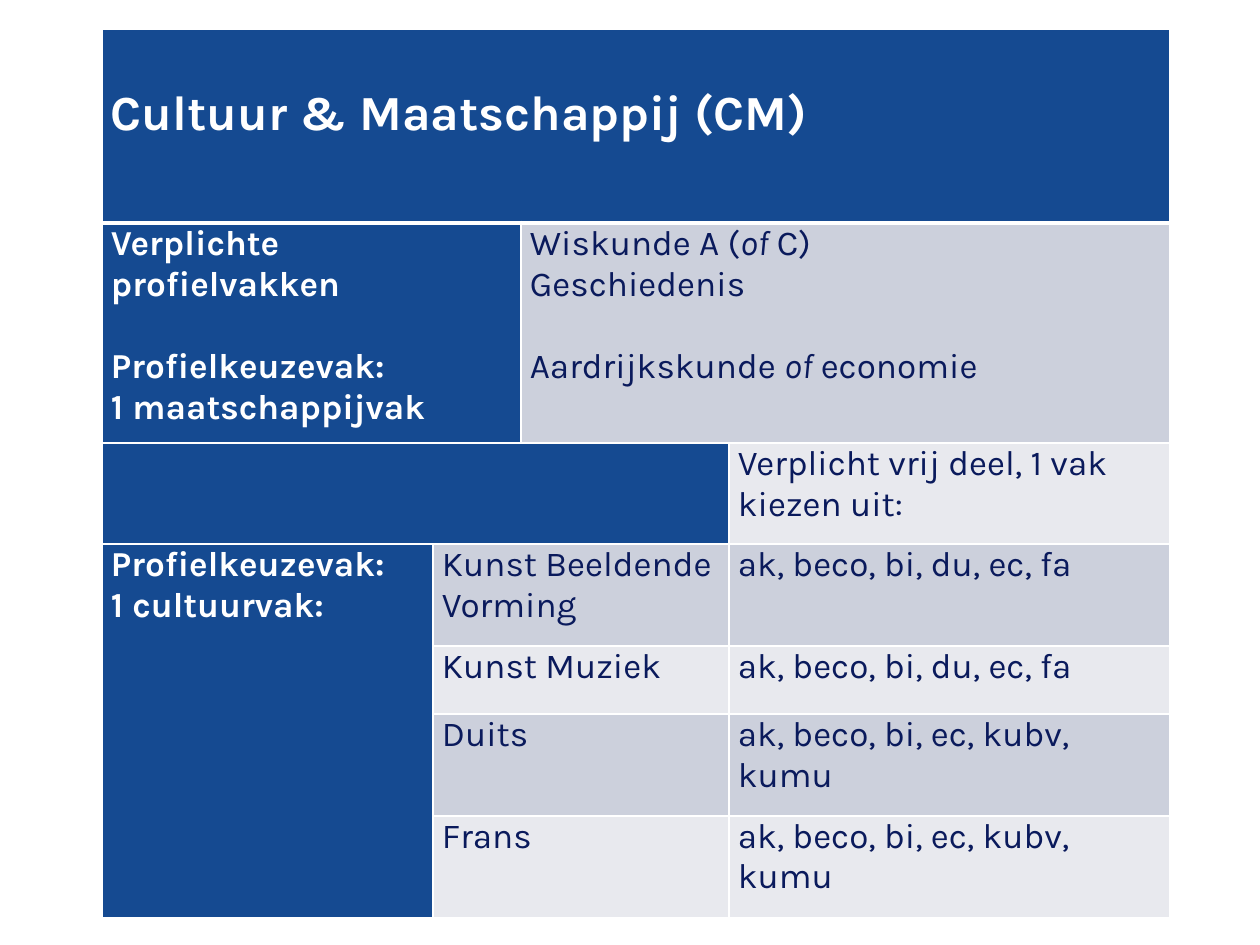
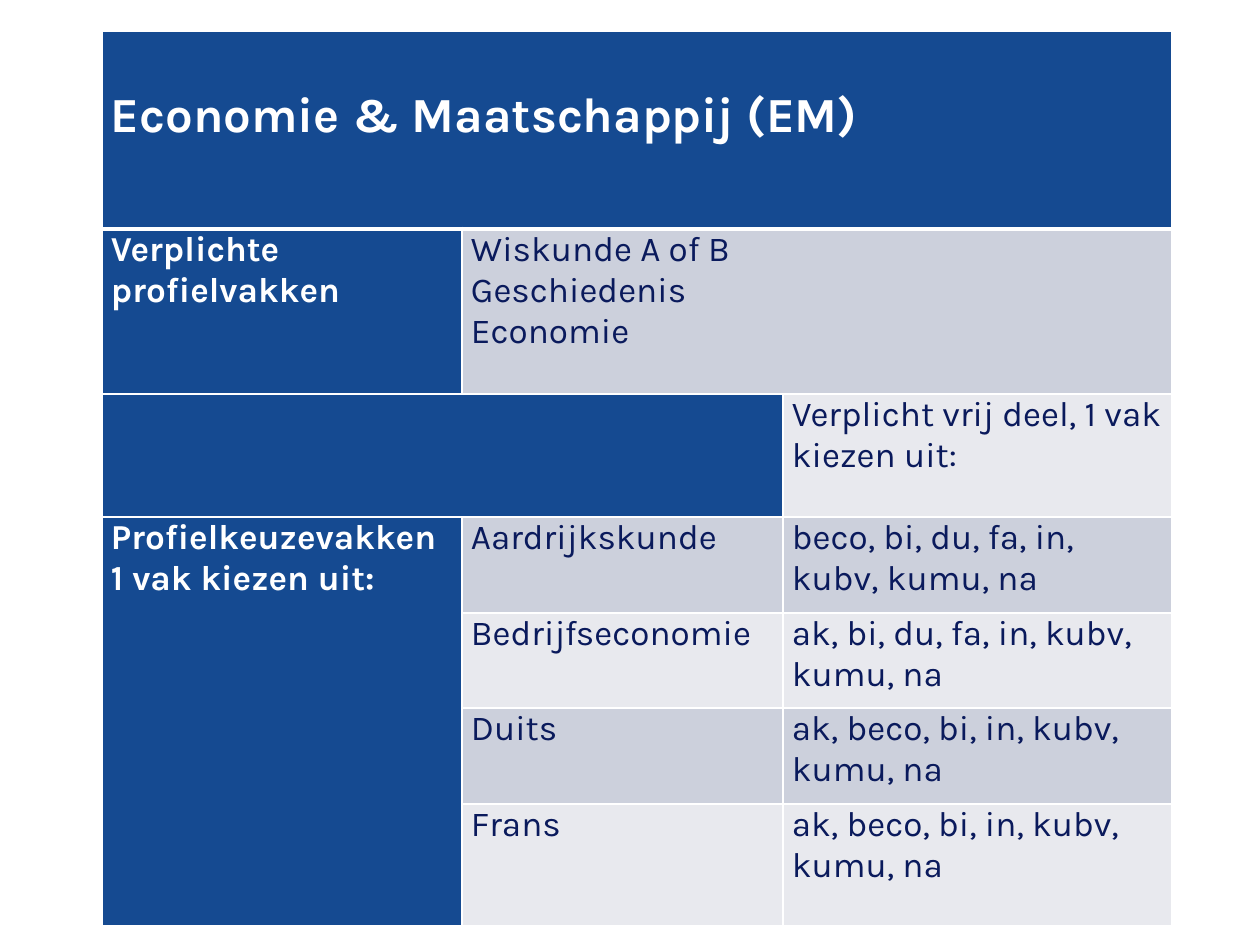
"""Build two slides that show the subject choices of the CM and EM profiles."""
from dataclasses import dataclass

from lxml import etree
from pptx import Presentation, util as u
from pptx.dml.color import RGBColor as Rgb
from pptx.enum import text as t
from pptx.oxml import ns


@dataclass(frozen=True)
class Theme:
    font: str = "Karla"
    blue: str = "154A91"
    navy: str = "0A1A5C"
    white: str = "FFFFFF"
    bands: tuple = ("E8E9EE", "CCD0DC")
    title: int = 28
    body: int = 20
    gap: float = 23.4
    thin: int = 1
    thick: int = 3


class Deck:
    def __init__(self, theme, wide, high):
        self.theme = theme
        self.prs = Presentation()
        self.prs.slide_width = self.px(wide)
        self.prs.slide_height = self.px(high)

    def px(self, size):
        return u.Emu(round(size * 914400 / 126))

    def page(self):
        self.slide = self.prs.slides.add_slide(self.prs.slide_layouts[6])

    def grid(self, left, top, cols, rows):
        frame = self.slide.shapes.add_table(
            len(rows), len(cols), self.px(left), self.px(top),
            self.px(sum(cols)), self.px(sum(rows)))
        self.table = frame.table
        self.table.first_row = self.table.horz_banding = False
        for col, size in zip(self.table.columns, cols):
            col.width = self.px(size)
        for row, size in zip(self.table.rows, rows):
            row.height = self.px(size)

    def cell(self, row, col, words="", high=1, wide=1, head=False, size=None, top=0):
        look = self.theme
        first = self.table.cell(row, col)
        if high * wide > 1:
            first.merge(self.table.cell(row + high - 1, col + wide - 1))
        for down in range(row, row + high):
            for over in range(col, col + wide):
                part = self.table.cell(down, over)
                part.fill.solid()
                part.fill.fore_color.rgb = Rgb.from_string(
                    look.blue if head else look.bands[row % 2])
                self.edge(part, down)
        first.margin_left = first.margin_right = self.px(9)
        first.margin_top, first.margin_bottom = self.px(top), 0
        first.vertical_anchor = t.MSO_ANCHOR.TOP
        groups = [group.split("\n") for group in words.split("\n\n")]
        first.text_frame.text = "\n".join(sum(groups, []))
        paras = iter(first.text_frame.paragraphs)
        for rank, group in enumerate(groups):
            for spot, line in enumerate(group):
                para = next(paras)
                if rank and not spot:
                    para.space_before = u.Pt(look.gap)
                self.line(para, line, head, size or look.body)

    def line(self, para, words, head, size):
        look = self.theme
        para.text = ""
        para.font.size = u.Pt(size)
        for spot, piece in enumerate(words.split("*")):
            run = para.add_run()
            run.text = piece
            font = run.font
            font.name, font.size = look.font, u.Pt(size)
            font.bold, font.italic = head, spot % 2 == 1
            font.color.rgb = Rgb.from_string(look.white if head else look.navy)

    def edge(self, part, row):
        look = self.theme
        prop = part._tc.get_or_add_tcPr()
        for spot, side in enumerate("LRTB"):
            bold = (row, side) in ((0, "B"), (1, "T"))
            width = u.Pt(look.thick if bold else look.thin)
            line = etree.Element(ns.qn(f"a:ln{side}"), w=str(width))
            fill = etree.SubElement(line, ns.qn("a:solidFill"))
            etree.SubElement(fill, ns.qn("a:srgbClr"), val=look.white)
            prop.insert(spot, line)

    def profile(self, top, cols, rows, title, must, split, pick, picks):
        last = len(cols) - 1
        self.page()
        self.grid(102, top, cols, rows)
        self.cell(0, 0, title, wide=last + 1, head=True, size=self.theme.title, top=57)
        self.cell(1, 0, must[0], wide=split, head=True)
        self.cell(1, split, must[1], wide=last + 1 - split)
        self.cell(2, 0, wide=last, head=True)
        self.cell(2, last, "Verplicht vrij deel, 1 vak kiezen uit:")
        self.cell(3, 0, pick, high=len(picks), head=True)
        for row, (name, free) in enumerate(picks, 3):
            self.cell(row, 1, name, wide=last - 1)
            self.cell(row, last, free)


def main():
    deck = Deck(Theme(), 1260, 945)
    arts, langs = "ak, beco, bi, du, ec, fa", "ak, beco, bi, ec, kubv, kumu"
    deck.profile(
        29, (331, 88, 208, 441), (194, 220, 101, 102, 68, 102, 102),
        "Cultuur & Maatschappij (CM)",
        ("Verplichte profielvakken\n\nProfielkeuzevak:\n1 maatschappijvak",
         "Wiskunde A (*of* C)\nGeschiedenis\n\nAardrijkskunde *of* economie"),
        2, "Profielkeuzevak:\n1 cultuurvak:",
        (("Kunst Beeldende Vorming", arts), ("Kunst Muziek", arts),
         ("Duits", langs), ("Frans", langs)))
    langs = "ak, beco, bi, in, kubv, kumu, na"
    deck.profile(
        31, (360, 321, 389), (198, 165, 123, 96, 95, 96, 122),
        "Economie & Maatschappij (EM)",
        ("Verplichte profielvakken", "Wiskunde A of B\nGeschiedenis\nEconomie"),
        1, "Profielkeuzevakken 1 vak kiezen uit:",
        (("Aardrijkskunde", "beco, bi, du, fa, in, kubv, kumu, na"),
         ("Bedrijfseconomie", "ak, bi, du, fa, in, kubv, kumu, na"),
         ("Duits", langs), ("Frans", langs)))
    deck.prs.save("out.pptx")


if __name__ == "__main__":
    main()
